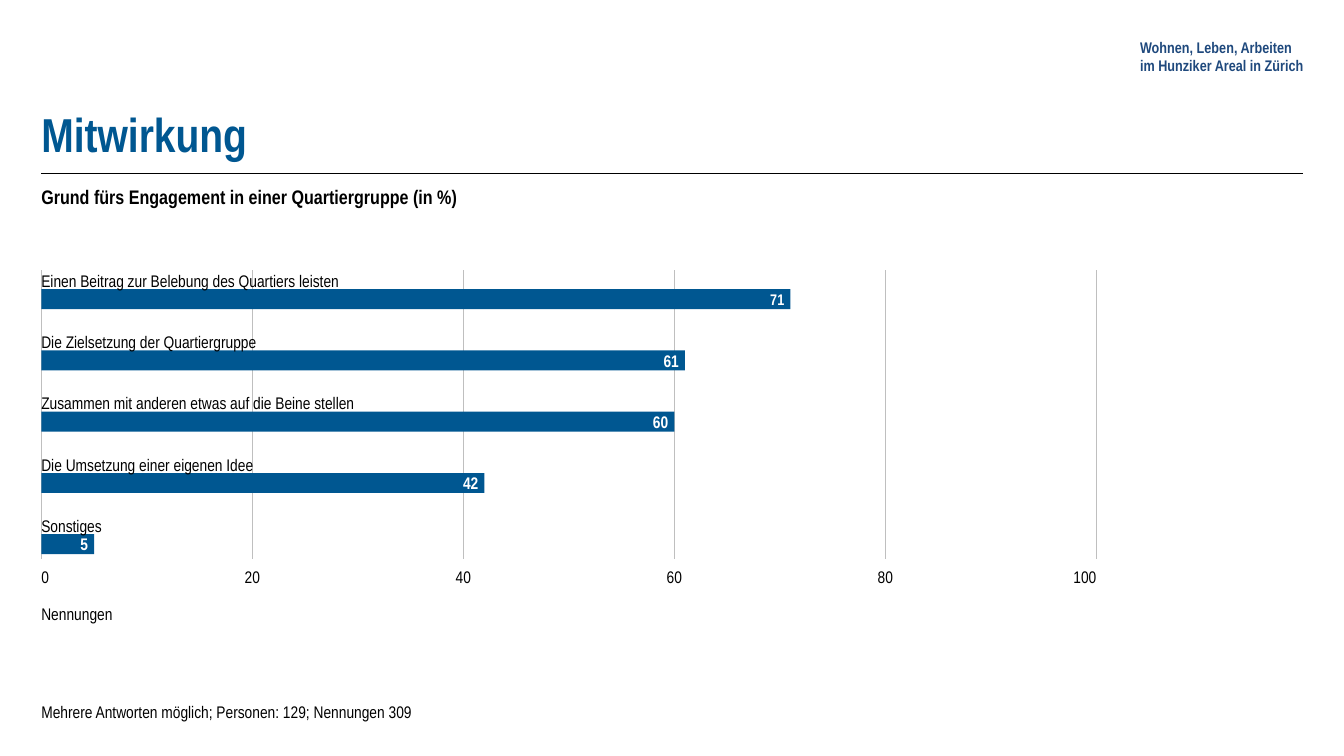
from dataclasses import dataclass

from lxml import etree
from pptx import Presentation
from pptx.dml.color import RGBColor
from pptx.enum.shapes import MSO_CONNECTOR, MSO_SHAPE
from pptx.enum.text import MSO_ANCHOR, PP_ALIGN
from pptx.oxml.ns import qn
from pptx.util import Pt

LEFT, CENTER, RIGHT = PP_ALIGN.LEFT, PP_ALIGN.CENTER, PP_ALIGN.RIGHT
TOP, MIDDLE, BOTTOM = MSO_ANCHOR.TOP, MSO_ANCHOR.MIDDLE, MSO_ANCHOR.BOTTOM
STRAIGHT, RECTANGLE = MSO_CONNECTOR.STRAIGHT, MSO_SHAPE.RECTANGLE


@dataclass(frozen=True)
class Theme:
    font: str = "Arial Narrow"
    blue: str = "005791"
    navy: str = "1F497D"
    grid: str = "BFBFBF"
    black: str = "000000"
    white: str = "FFFFFF"
    title: float = 34
    subtitle: float = 14
    body: float = 12
    small: float = 11


THEME = Theme()


@dataclass(frozen=True)
class Box:
    x: float
    y: float
    w: float
    h: float


@dataclass(frozen=True)
class Style:
    size: float = THEME.body
    color: str = THEME.black
    bold: bool = False
    align: PP_ALIGN = LEFT
    anchor: MSO_ANCHOR = TOP
    insets: tuple[float, float, float, float] = (0, 0, 0, 0)


@dataclass(frozen=True)
class Label:
    text: str
    box: Box
    style: Style = Style()


@dataclass(frozen=True)
class Bar:
    reason: str
    percent: int
    size: float = THEME.body


MARGIN = 29.5
CONTENT_W = 901.5
LABEL_W, LABEL_H = 430.5, 13
AXIS_W, AXIS_MAX, TICK_STEP = 753.6, 100, 20
GRID_TOP, GRID_BOTTOM = 193, 399.6
TICK_Y, TICK_W, TICK_H = 404.6, 34, 17
BAR_TOP, BAR_STEP, BAR_H, LABEL_RISE = 206.6, 43.75, 14.2, 13.3
RULE_Y = 123.8

LABELS = [
    Label("Wohnen, Leben, Arbeiten\vim Hunziker Areal in Zürich", Box(814.3, 25.2, 134, 30.2),
          Style(THEME.small, THEME.navy, True, anchor=MIDDLE, insets=(0, 7.2, 0, 7.2))),
    Label("Mitwirkung", Box(MARGIN, 26, CONTENT_W, 90),
          Style(THEME.title, THEME.blue, True, anchor=BOTTOM)),
    Label("Grund fürs Engagement in einer Quartiergruppe (in %)",
          Box(MARGIN, 131.8, CONTENT_W, 19.5), Style(THEME.subtitle, bold=True)),
    Label("Nennungen", Box(MARGIN, 431.3, LABEL_W, LABEL_H)),
    Label("Mehrere Antworten möglich; Personen: 129; Nennungen 309",
          Box(MARGIN, 501.1, LABEL_W, LABEL_H)),
]

BARS = [
    Bar("Einen Beitrag zur Belebung des Quartiers leisten", 71, THEME.small),
    Bar("Die Zielsetzung der Quartiergruppe", 61),
    Bar("Zusammen mit anderen etwas auf die Beine stellen", 60),
    Bar("Die Umsetzung einer eigenen Idee", 42),
    Bar("Sonstiges", 5),
]


def set_attrs(target: object, values: dict[str, object]) -> None:
    for name, value in values.items():
        setattr(target, name, value)


def rgb(color: str) -> RGBColor:
    return RGBColor.from_string(color)


def write(sp, text: str, style: Style) -> None:
    left, top, right, bottom = style.insets
    tf = sp.text_frame
    set_attrs(tf, {
        "word_wrap": True, "vertical_anchor": style.anchor,
        "margin_left": Pt(left), "margin_top": Pt(top),
        "margin_right": Pt(right), "margin_bottom": Pt(bottom),
    })
    p = tf.paragraphs[0]
    p.text = text
    p.alignment = style.align
    for r in p.runs:
        set_attrs(r.font, {"name": THEME.font, "size": Pt(style.size), "bold": style.bold})
        r.font.color.rgb = rgb(style.color)


def add_label(s, label: Label) -> None:
    b = label.box
    sp = s.shapes.add_textbox(Pt(b.x), Pt(b.y), Pt(b.w), Pt(b.h))
    write(sp, label.text, label.style)


def add_line(s, x1: float, y1: float, x2: float, y2: float, color: str, width: float) -> None:
    line = s.shapes.add_connector(STRAIGHT, Pt(x1), Pt(y1), Pt(x2), Pt(y2))
    line.line.color.rgb = rgb(color)
    line.line.width = Pt(width)
    etree.SubElement(line._element.spPr, qn("a:effectLst"))


def add_axis(s) -> None:
    for value in range(0, AXIS_MAX + 1, TICK_STEP):
        x = MARGIN + AXIS_W * value / AXIS_MAX
        add_line(s, x, GRID_TOP, x, GRID_BOTTOM, THEME.grid, 0.75)
        align, shift = {0: (LEFT, 0), AXIS_MAX: (RIGHT, TICK_W)}.get(value, (CENTER, TICK_W / 2))
        add_label(s, Label(str(value), Box(x - shift, TICK_Y, TICK_W, TICK_H), Style(align=align)))


def add_bar(s, bar: Bar, y: float) -> None:
    sp = s.shapes.add_shape(
        RECTANGLE, Pt(MARGIN), Pt(y), Pt(AXIS_W * bar.percent / AXIS_MAX), Pt(BAR_H))
    sp.shadow.inherit = False
    sp.fill.solid()
    sp.fill.fore_color.rgb = rgb(THEME.blue)
    sp.line.fill.background()
    write(sp, str(bar.percent),
          Style(bar.size, THEME.white, True, RIGHT, MIDDLE, (7.2, 3.6, 4.3, 3.6)))
    add_label(s, Label(bar.reason, Box(MARGIN, y - LABEL_RISE, LABEL_W, LABEL_H)))


def main() -> None:
    prs = Presentation()
    set_attrs(prs, {"slide_width": Pt(960), "slide_height": Pt(540)})
    s = prs.slides.add_slide(prs.slide_layouts[6])
    add_axis(s)
    for i, bar in enumerate(BARS):
        add_bar(s, bar, BAR_TOP + i * BAR_STEP)
    for label in LABELS:
        add_label(s, label)
    add_line(s, MARGIN, RULE_Y, MARGIN + CONTENT_W, RULE_Y, THEME.black, 1)
    prs.save("out.pptx")


if __name__ == "__main__":
    main()
